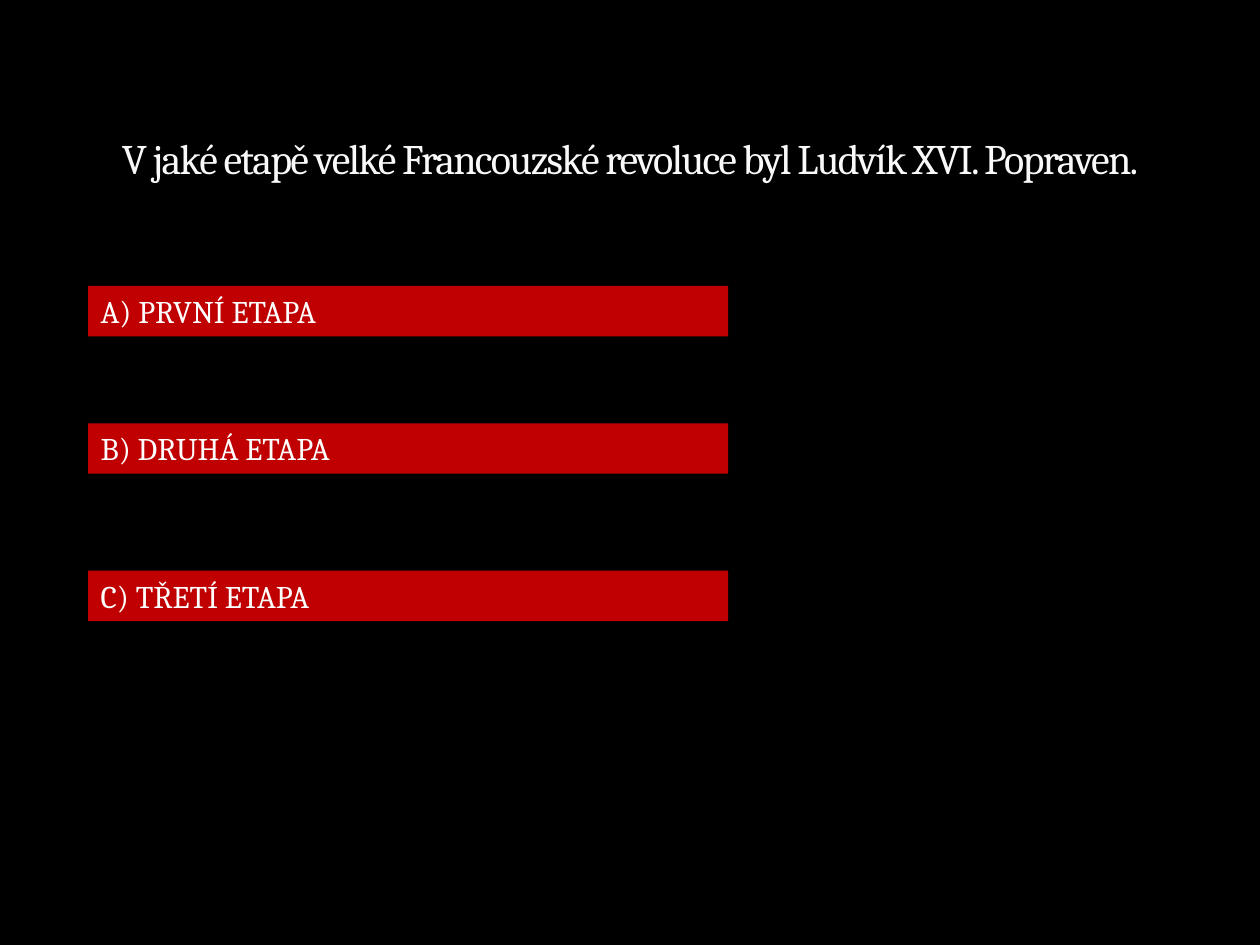
from pptx import Presentation
from pptx.dml.color import RGBColor
from pptx.enum.shapes import MSO_SHAPE
from pptx.enum.text import MSO_ANCHOR, MSO_AUTO_SIZE, PP_ALIGN
from pptx.util import Inches, Pt

QUESTION = "V jaké etapě velké Francouzské revoluce byl Ludvík XVI. Popraven."
# Answer text and top edge in inches
ANSWERS = [
    ("A) PRVNÍ ETAPA", 2.27),
    ("B) DRUHÁ ETAPA", 3.36),
    ("C) TŘETÍ ETAPA", 4.53),
]
ANSWER_LEFT, ANSWER_WIDTH, ANSWER_HEIGHT = 0.7, 5.08, 0.4

FONT = "Cambria"
BLACK = RGBColor(0x00, 0x00, 0x00)
OFF_WHITE = RGBColor(0xF9, 0xF9, 0xF9)
WHITE = RGBColor(0xFF, 0xFF, 0xFF)
RED = RGBColor(0xC0, 0x00, 0x00)


def add_run(p, text, size, color):
    r = p.add_run()
    r.text = text
    r.font.name = FONT
    r.font.size = Pt(size)
    r.font.color.rgb = color
    return r


def place(shape, left, top, width, height):
    shape.left, shape.top = Inches(left), Inches(top)
    shape.width, shape.height = Inches(width), Inches(height)


prs = Presentation()
prs.slide_width, prs.slide_height = Inches(10), Inches(7.5)
s = prs.slides.add_slide(prs.slide_layouts[5])  # title only
s.background.fill.solid()
s.background.fill.fore_color.rgb = BLACK

# Question
title = s.shapes.title
place(title, 0.5, 0.17, 9, 1.33)
tf = title.text_frame
tf.word_wrap = True
tf.auto_size = MSO_AUTO_SIZE.NONE
tf.vertical_anchor = MSO_ANCHOR.BOTTOM
p = tf.paragraphs[0]
p.alignment = PP_ALIGN.CENTER
r = add_run(p, QUESTION, 24, OFF_WHITE)
r.font._element.set("spc", "-100")  # tighten letters by 1 pt

# Answer bars
for text, top in ANSWERS:
    bar = s.shapes.add_shape(MSO_SHAPE.RECTANGLE, 0, 0, 0, 0)
    place(bar, ANSWER_LEFT, top, ANSWER_WIDTH, ANSWER_HEIGHT)
    bar.shadow.inherit = False
    bar.fill.solid()
    bar.fill.fore_color.rgb = RED
    bar.line.fill.background()
    tf = bar.text_frame
    tf.word_wrap = True
    tf.auto_size = MSO_AUTO_SIZE.SHAPE_TO_FIT_TEXT
    tf.vertical_anchor = MSO_ANCHOR.TOP
    p = tf.paragraphs[0]
    p.alignment = PP_ALIGN.LEFT
    add_run(p, text, 18, WHITE)

prs.save("out.pptx")
